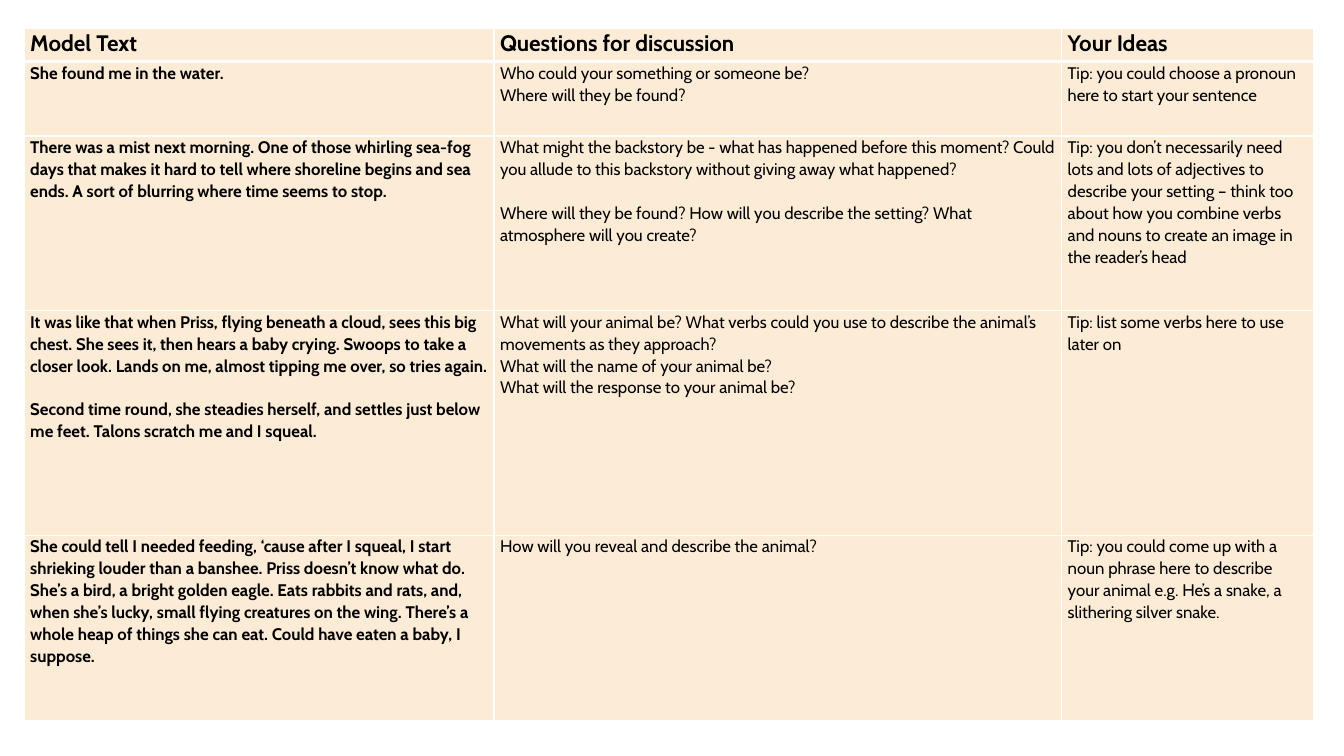
from lxml.etree import SubElement
from pptx import Presentation
from pptx.dml.color import RGBColor
from pptx.oxml.ns import qn
from pptx.util import Inches, Pt

COLORS = {"paper": "FCECD5", "rule": "FFFFFF", "text": "000000"}
FONT = "Cabin"
LINE_SPACING = 1.07
BLOCK_GAP = 15.7  # points, one line of body text

# Table grid, in inches
LEFT, TOP = 0.24, 0.28
COLUMNS = [4.66, 5.63, 2.5]
ROWS = [0.33, 0.74, 1.73, 2.23, 1.84]

# Each cell is a list of blocks; each block is a list of paragraphs
CONTENT = [
    [[["Model Text"]], [["Questions for discussion"]], [["Your Ideas"]]],
    [
        [["She found me in the water."]],
        [["Who could your something or someone be?", "Where will they be found?"]],
        [["Tip: you could choose a pronoun here to start your sentence"]],
    ],
    [
        [["There was a mist next morning. One of those whirling sea-fog days that "
          "makes it hard to tell where shoreline begins and sea ends. A sort of "
          "blurring where time seems to stop."]],
        [["What might the backstory be - what has happened before this moment? Could "
          "you allude to this backstory without giving away what happened?"],
         ["Where will they be found? How will you describe the setting? What "
          "atmosphere will you create?"]],
        [["Tip: you don’t necessarily need lots and lots of adjectives to describe "
          "your setting – think too about how you combine verbs and nouns to create "
          "an image in the reader’s head"]],
    ],
    [
        [["It was like that when Priss, flying beneath a cloud, sees this big chest. "
          "She sees it, then hears a baby crying. Swoops to take a closer look. Lands "
          "on me, almost tipping me over, so tries again."],
         ["Second time round, she steadies herself, and settles just below me feet. "
          "Talons scratch me and I squeal."]],
        [["What will your animal be? What verbs could you use to describe the "
          "animal’s movements as they approach?",
          "What will the name of your animal be?",
          "What will the response to your animal be?"]],
        [["Tip: list some verbs here to use later on"]],
    ],
    [
        [["She could tell I needed feeding, ‘cause after I squeal, I start shrieking "
          "louder than a banshee. Priss doesn’t know what do. She’s a bird, a bright "
          "golden eagle. Eats rabbits and rats, and, when she’s lucky, small flying "
          "creatures on the wing. There’s a whole heap of things she can eat. Could "
          "have eaten a baby, I suppose."]],
        [["How will you reveal and describe the animal?"]],
        [["Tip: you could come up with a noun phrase here to describe your animal "
          "e.g. He’s a snake, a slithering silver snake."]],
    ],
]


def write_blocks(cell, blocks, size, bold):
    """Write the paragraphs of a cell, with a gap before each later block."""
    frame = cell.text_frame
    frame.text = "\n".join(text for block in blocks for text in block)
    paragraphs = iter(frame.paragraphs)
    for block_index, block in enumerate(blocks):
        for line_index, _ in enumerate(block):
            paragraph = next(paragraphs)
            paragraph.line_spacing = LINE_SPACING
            if block_index and not line_index:
                paragraph.space_before = Pt(BLOCK_GAP)
            paragraph.font.name = FONT
            paragraph.font.size = Pt(size)
            paragraph.font.bold = bold
            paragraph.font.color.rgb = RGBColor.from_string(COLORS["text"])


def draw_borders(cell, top, bottom):
    """Rule the four sides of a cell; widths are in points."""
    properties = cell._tc.get_or_add_tcPr()
    for side, width in (("L", 1), ("R", 1), ("T", top), ("B", bottom)):
        line = SubElement(properties, qn(f"a:ln{side}"), w=str(Pt(width)))
        fill = SubElement(line, qn("a:solidFill"))
        SubElement(fill, qn("a:srgbClr"), val=COLORS["rule"])


def style_cell(cell, row_index):
    cell.margin_left = cell.margin_right = Inches(0.06)
    cell.margin_top = cell.margin_bottom = 0
    # The rule under the header row is thicker
    draw_borders(cell, top=3 if row_index == 1 else 1, bottom=3 if row_index == 0 else 1)
    cell.fill.solid()
    cell.fill.fore_color.rgb = RGBColor.from_string(COLORS["paper"])


def add_planning_table(slide):
    table = slide.shapes.add_table(
        len(ROWS), len(COLUMNS), Inches(LEFT), Inches(TOP),
        Inches(sum(COLUMNS)), Inches(sum(ROWS))).table
    for column, width in zip(table.columns, COLUMNS):
        column.width = Inches(width)
    for row, height in zip(table.rows, ROWS):
        row.height = Inches(height)
    for row_index, row_content in enumerate(CONTENT):
        is_header = row_index == 0
        for column_index, blocks in enumerate(row_content):
            cell = table.cell(row_index, column_index)
            style_cell(cell, row_index)
            write_blocks(cell, blocks, size=16 if is_header else 12,
                         bold=is_header or column_index == 0)


def main():
    presentation = Presentation()
    presentation.slide_width = Inches(13.33)
    presentation.slide_height = Inches(7.5)
    slide = presentation.slides.add_slide(presentation.slide_layouts[6])
    add_planning_table(slide)
    presentation.save("out.pptx")


if __name__ == "__main__":
    main()
